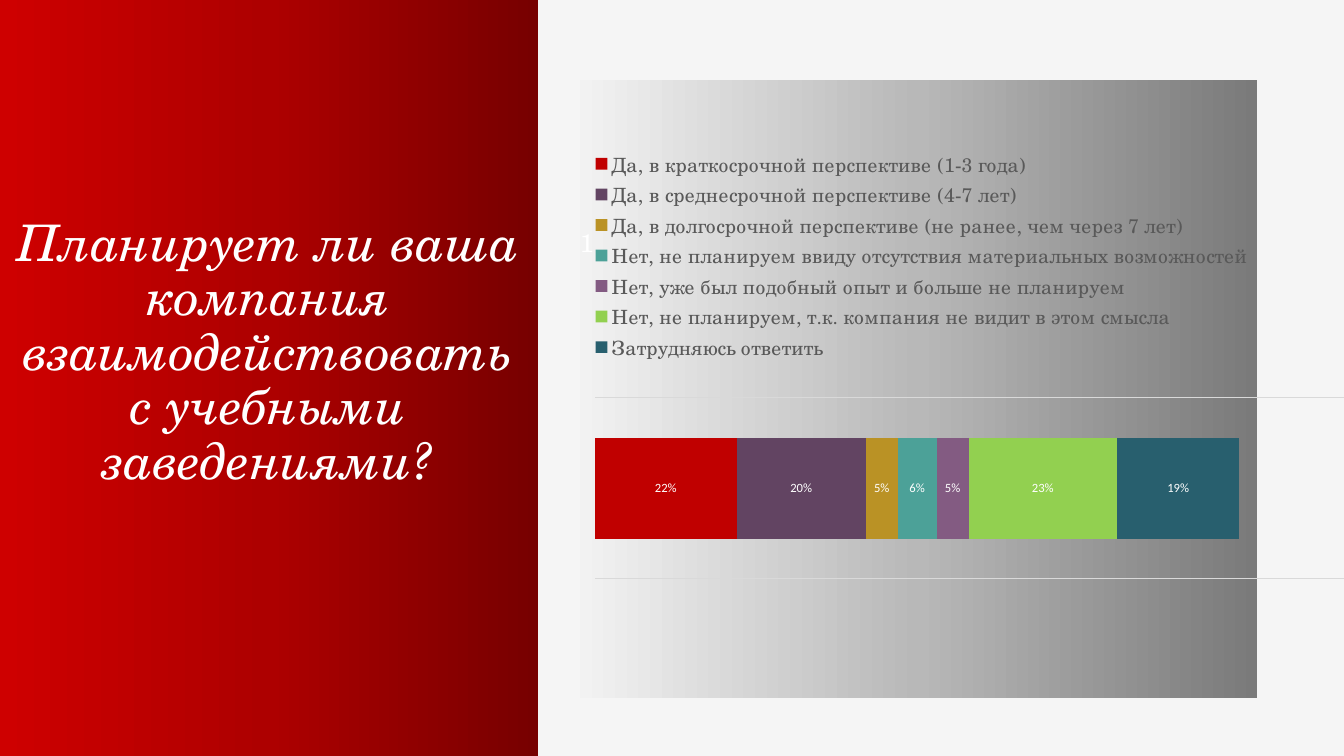
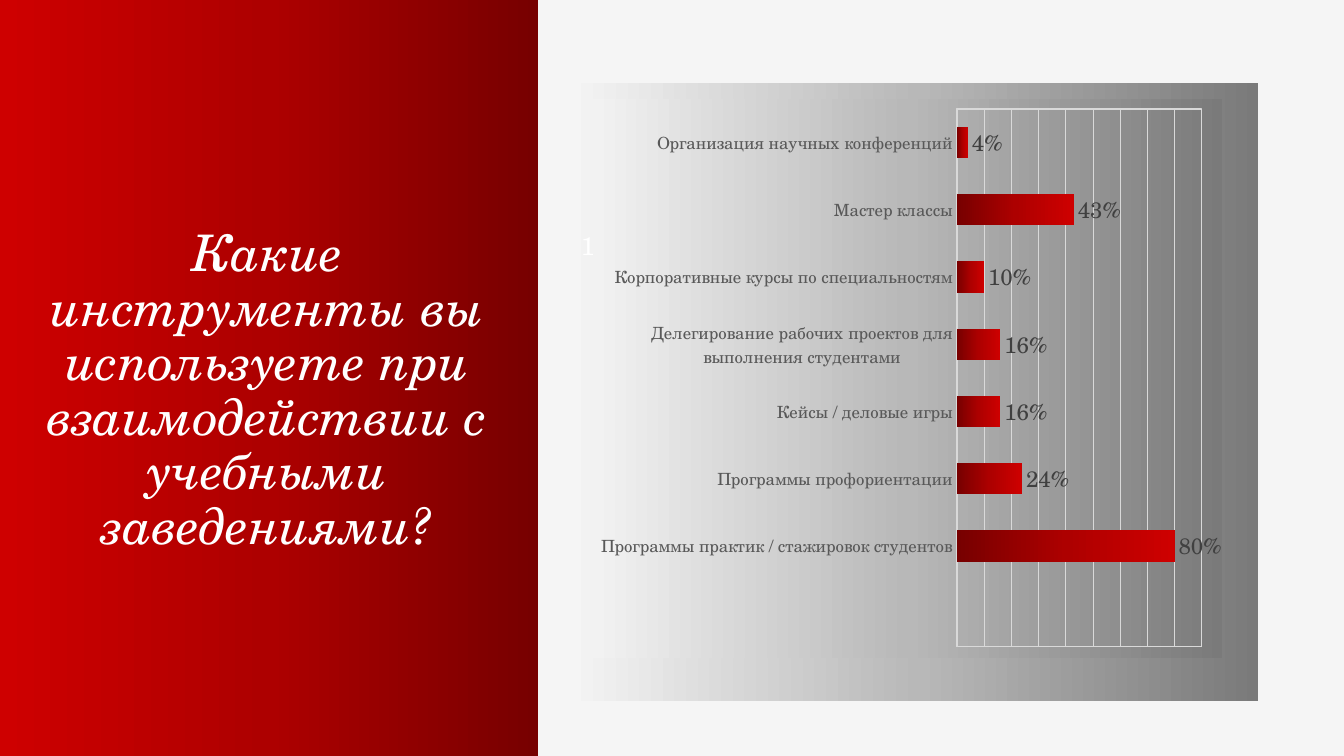
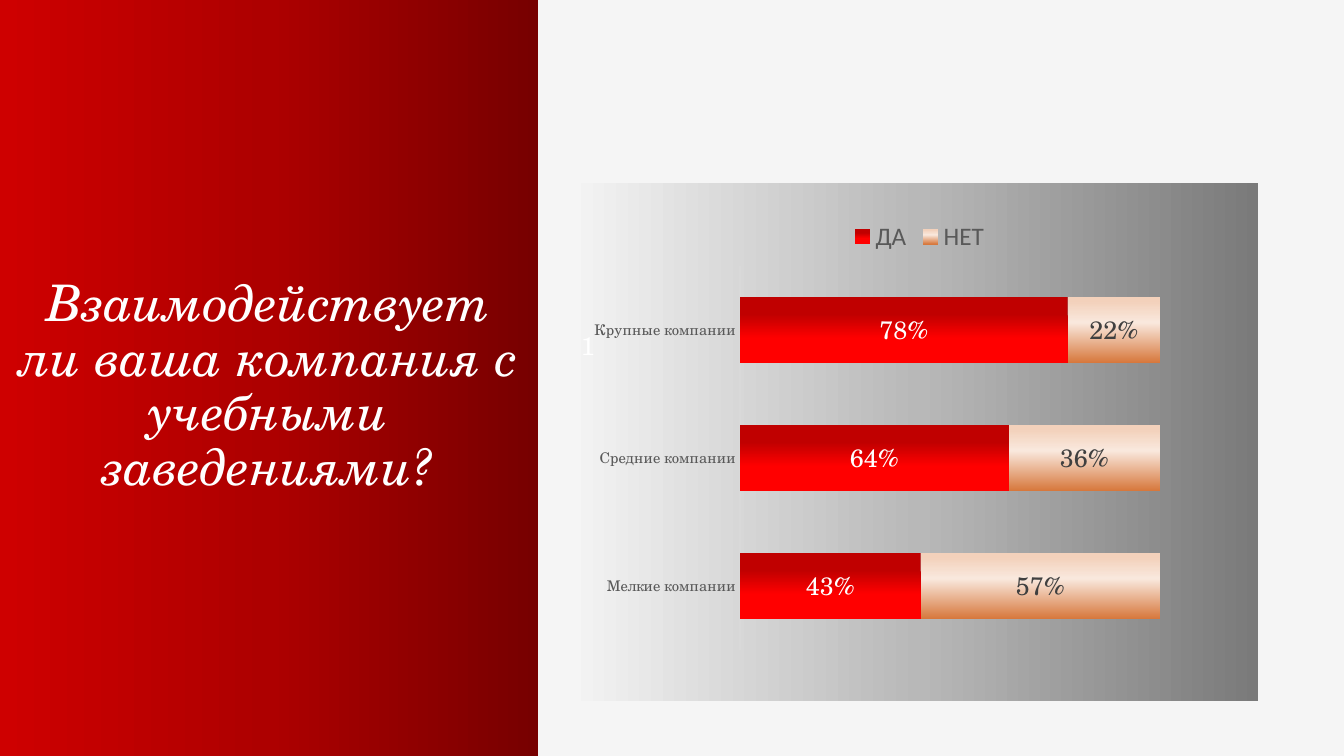
"""Build three survey slides, each with a red question band and a bar chart."""
from dataclasses import dataclass

from pptx import Presentation
from pptx import util as u
from pptx.chart.data import CategoryChartData
from pptx.dml.color import RGBColor
from pptx.enum import chart as ch, shapes, text
from pptx.oxml import parse_xml
from pptx.oxml.ns import nsdecls, qn

PX = 12192000 / 1344


@dataclass(frozen=True)
class Theme:
    serif: str = "TeX Gyre Schola"
    sans: str = "Calibri"
    background: str = "F5F5F5"
    white: str = "FFFFFF"
    black: str = "000000"
    grey: str = "595959"
    dark: str = "404040"
    line: str = "D9D9D9"
    red: tuple = ((0, "770000"), (50, "AD0000"), (100, "CE0000"))
    band: tuple = ((0, "CE0000"), (50, "AD0000"), (100, "770000"))
    panel: tuple = ((0, "F2F2F2"), (50, "B8B8B8"), (100, "7A7A7A"))
    yes: tuple = ((26, "C00000"), (63, "FF0000"))
    no: tuple = ((6, "F3D1BB"), (39, "F9E8DD"), (100, "D7783D"))
    title_size: float = 36
    mark_size: float = 18
    base_size: float = 10


THEME = Theme()
STACKED = ch.XL_CHART_TYPE.BAR_STACKED
CLUSTERED = ch.XL_CHART_TYPE.BAR_CLUSTERED
CENTER = ch.XL_LABEL_POSITION.CENTER
OUTSIDE = ch.XL_LABEL_POSITION.OUTSIDE_END

PLAN_ANSWERS = [
    ("Да, в краткосрочной перспективе (1-3 года)", 0.22, "C00000"),
    ("Да, в среднесрочной перспективе (4-7 лет)", 0.2, "624462"),
    ("Да, в долгосрочной перспективе (не ранее, чем через 7 лет)", 0.05, "BA9225"),
    ("Нет, не планируем ввиду отсутствия материальных возможностей", 0.06, "4CA198"),
    ("Нет, уже был подобный опыт и больше не планируем", 0.05, "835B82"),
    ("Нет, не планируем, т.к. компания не видит в этом смысла", 0.23, "92D050"),
    ("Затрудняюсь ответить", 0.19, "285F6E"),
]

TOOLS = [
    ("", None),
    ("Программы практик / стажировок студентов", 0.8),
    ("Программы профориентации", 0.24),
    ("Кейсы / деловые игры", 0.16),
    ("Делегирование рабочих проектов для выполнения студентами", 0.16),
    ("Корпоративные курсы по специальностям", 0.1),
    ("Мастер классы", 0.43),
    ("Организация научных конференций", 0.04),
]

SLIDES = [
    dict(
        title="Планирует ли ваша компания взаимодействовать с учебными заведениями?",
        title_box=(6, 206, 525, 289), panel=(580, 80, 677, 618),
        chart=dict(
            kind=STACKED, box=(561, 113, 808, 475), plot=(595, 398, 774, 181),
            categories=["1"], gap=79, overlap=100, maximum=1.2,
            series=[(name, [value], color) for name, value, color in PLAN_ANSWERS],
            labels=(9, THEME.sans, [THEME.white] * len(PLAN_ANSWERS), CENTER),
            legend=(14, THEME.serif, (590, 148, 664, 215)), category_grid=True),
    ),
    dict(
        title="Какие инструменты вы используете при взаимодействии с учебными заведениями?",
        title_box=(-2, 225, 539, 335), panel=(581, 83, 677, 618),
        chart=dict(
            kind=CLUSTERED, box=(593, 99, 629, 559), plot=(957, 109, 245, 538),
            categories=[name for name, _ in TOOLS], gap=115, overlap=-20, maximum=0.9,
            series=[("Series 1", [value for _, value in TOOLS], THEME.red)],
            labels=(16, THEME.serif, [THEME.dark], OUTSIDE),
            axis_size=12, value_grid=True, fill=THEME.panel),
    ),
    dict(
        title="Взаимодействует ли ваша компания с учебными заведениями?",
        title_box=(6, 256, 525, 245), panel=(581, 183, 677, 518),
        chart=dict(
            kind=STACKED, box=(581, 209, 677, 450), plot=(740, 266, 504, 384),
            categories=["Мелкие компании", "Средние компании", "Крупные компании"],
            gap=95, overlap=100, maximum=1.2,
            series=[("ДА", [0.43, 0.64, 0.78], THEME.yes),
                    ("НЕТ", [0.57, 0.36, 0.22], THEME.no)],
            labels=(18, THEME.serif, [THEME.white, THEME.dark], CENTER),
            legend=(18, THEME.sans, None), axis_size=10.5, series_angle=90),
    ),
]


def emu(box):
    return [u.Emu(round(length * PX)) for length in box]


def set_font(font, size, name, color, italic=None):
    font.size, font.name, font.italic = u.Pt(size), name, italic
    font.color.rgb = RGBColor.from_string(color)


def set_line(line, width):
    line.color.rgb = RGBColor.from_string(THEME.line)
    line.width = u.Pt(width)


def gradient_xml(stops, angle=0):
    marks = "".join(f'<a:gs pos="{position * 1000}"><a:srgbClr val="{color}"/></a:gs>'
                    for position, color in stops)
    return (f'<a:gradFill {nsdecls("a")} rotWithShape="1"><a:gsLst>{marks}</a:gsLst>'
            f'<a:lin ang="{angle * 60000}" scaled="0"/></a:gradFill>')


def paint(fill, element, color, angle=0):
    fill.solid()
    if isinstance(color, str):
        fill.fore_color.rgb = RGBColor.from_string(color)
        return
    solid = element.find(".//" + qn("a:solidFill"))
    solid.getparent().replace(solid, parse_xml(gradient_xml(color, angle)))


def chart_properties(fill, line="<a:ln><a:noFill/></a:ln>"):
    return parse_xml(f'<c:spPr {nsdecls("c", "a")}>{fill}{line}</c:spPr>')


def place(element, box, chart_box, inner=False):
    left, top, width, height = chart_box
    parts = dict(x=(box[0] - left) / width, y=(box[1] - top) / height,
                 w=box[2] / width, h=box[3] / height)
    target = '<c:layoutTarget val="inner"/>' if inner else ""
    modes = '<c:xMode val="edge"/><c:yMode val="edge"/>'
    sizes = "".join(f'<c:{key} val="{value:.4f}"/>' for key, value in parts.items())
    layout = parse_xml(f'<c:layout {nsdecls("c")}><c:manualLayout>{target}{modes}{sizes}'
                       '</c:manualLayout></c:layout>')
    for old in element.findall(qn("c:layout")):
        element.remove(old)
    if inner:
        element.insert(0, layout)
    else:
        element.find(qn("c:legendPos")).addnext(layout)


def add_rectangle(slide, box, stops):
    shape = slide.shapes.add_shape(shapes.MSO_SHAPE.RECTANGLE, *emu(box))
    shape.shadow.inherit = False
    shape.line.fill.background()
    paint(shape.fill, shape.element, stops)
    return shape


def add_panel(slide, box):
    frame = add_rectangle(slide, box, THEME.panel).text_frame
    frame.vertical_anchor = text.MSO_ANCHOR.TOP
    frame.margin_left, frame.margin_top = emu((0, 147))
    paragraph = frame.paragraphs[0]
    paragraph.text = "1"
    paragraph.alignment = text.PP_ALIGN.LEFT
    set_font(paragraph.font, THEME.mark_size, THEME.serif, THEME.white)


def add_title(slide, title, box):
    frame = slide.shapes.add_textbox(*emu(box)).text_frame
    frame.word_wrap = True
    frame.vertical_anchor = text.MSO_ANCHOR.BOTTOM
    paragraph = frame.paragraphs[0]
    paragraph.text = title
    paragraph.alignment = text.PP_ALIGN.CENTER
    paragraph.line_spacing = 0.9
    set_font(paragraph.font, THEME.title_size, THEME.serif, THEME.white, italic=True)


def style_axes(chart, maximum, axis_size, category_grid, value_grid):
    values, categories = chart.value_axis, chart.category_axis
    values.minimum_scale, values.maximum_scale = 0, maximum
    values.visible = False
    for axis, grid in ((values, value_grid), (categories, category_grid)):
        axis.has_major_gridlines = grid
        if grid:
            set_line(axis.major_gridlines.format.line, 0.75)
    if axis_size:
        categories.major_tick_mark = ch.XL_TICK_MARK.NONE
        set_font(categories.tick_labels.font, axis_size, THEME.serif, THEME.grey)
        set_line(categories.format.line, 1)
    else:
        categories.visible = False


def style_series(plot, colors, angle, labels):
    size, font_name, font_colors, position = labels
    for series, color, font_color in zip(plot.series, colors, font_colors):
        series.invert_if_negative = False
        paint(series.format.fill, series._element, color, angle)
        data_labels = series.data_labels
        data_labels.show_value = True
        data_labels.number_format = "0%"
        data_labels.number_format_is_linked = False
        data_labels.position = position
        set_font(data_labels.font, size, font_name, font_color)


def add_chart(slide, kind, box, plot, categories, gap, overlap, maximum, series, labels,
              legend=None, axis_size=None, category_grid=False, value_grid=False,
              fill=None, series_angle=0):
    data = CategoryChartData(number_format="0%")
    data.categories = categories
    for name, values, _ in series:
        data.add_series(name, values)
    chart = slide.shapes.add_chart(kind, *emu(box), data).chart
    chart.has_title = False
    set_font(chart.font, THEME.base_size, THEME.sans, THEME.black)
    style_axes(chart, maximum, axis_size, category_grid, value_grid)

    bars = chart.plots[0]
    bars.gap_width, bars.overlap, bars.vary_by_categories = gap, overlap, False
    style_series(bars, [color for _, _, color in series], series_angle, labels)

    chart.has_legend = legend is not None
    if legend:
        size, font_name, legend_box = legend
        chart.legend.position = ch.XL_LEGEND_POSITION.TOP
        chart.legend.include_in_layout = False
        set_font(chart.legend.font, size, font_name, THEME.grey)
        if legend_box:
            place(chart.legend._element, legend_box, box)

    root = chart._chartSpace.find(qn("c:chart"))
    root.addnext(chart_properties(gradient_xml(fill) if fill else "<a:noFill/>"))
    area = root.find(qn("c:plotArea"))
    place(area, plot, box, inner=True)
    frame = (f'<a:ln w="9525"><a:solidFill><a:srgbClr val="{THEME.line}"/></a:solidFill></a:ln>'
             if value_grid else "<a:ln><a:noFill/></a:ln>")
    area.append(chart_properties("<a:noFill/>", frame))


def main():
    presentation = Presentation()
    presentation.slide_width, presentation.slide_height = emu((1344, 756))
    for content in SLIDES:
        slide = presentation.slides.add_slide(presentation.slide_layouts[6])
        paint(slide.background.fill, slide.element, THEME.background)
        add_rectangle(slide, (0, 0, 538, 756), THEME.band)
        add_title(slide, content["title"], content["title_box"])
        add_panel(slide, content["panel"])
        add_chart(slide, **content["chart"])
    presentation.save("out.pptx")


if __name__ == "__main__":
    main()
